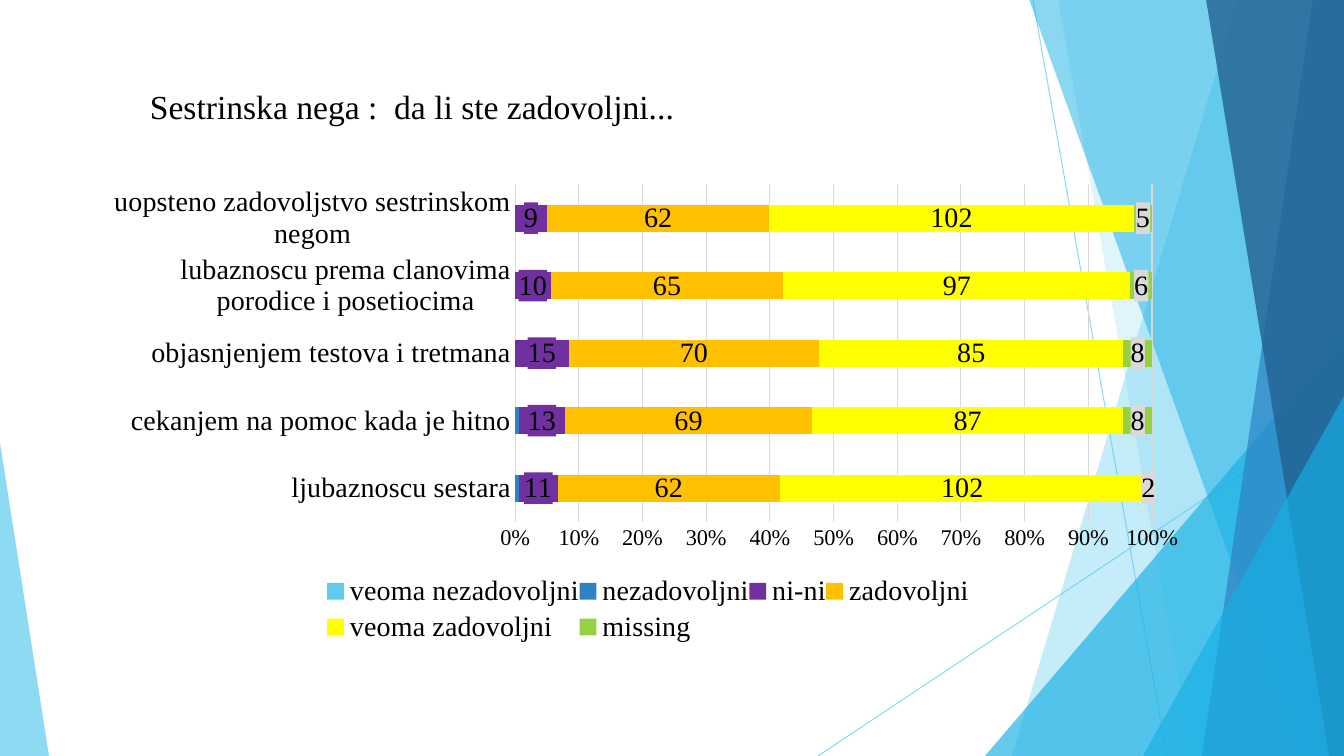
import pptx
import pptx.chart.data
import pptx.dml.color
import pptx.enum.chart
import pptx.enum.shapes
import pptx.enum.text
import pptx.oxml
import pptx.oxml.ns
import pptx.util

PX = 914400 / 100.8
WIDTH, HEIGHT = 1344, 756
FONT = "Times New Roman"
COLORS = {
    "sky": "5FCBEF", "cyan": "17B0E4", "blue": "2E83C3", "navy": "226292",
    "purple": "7030A0", "orange": "FFC000", "yellow": "FFFF00",
    "green": "96D141", "gray": "D9D9D9", "black": "000000",
}
CATEGORIES = [
    "ljubaznoscu sestara",
    "cekanjem na pomoc kada je hitno",
    "objasnjenjem testova i tretmana",
    "lubaznoscu prema clanovima porodice i posetiocima",
    "uopsteno zadovoljstvo sestrinskom negom",
]
# Name, values, bar colour, whether labelled, label background
SERIES = [
    ("veoma nezadovoljni", [None] * 5, "sky", False, None),
    ("nezadovoljni", [1, 1, None, None, None], "blue", False, None),
    ("ni-ni", [11, 13, 15, 10, 9], "purple", True, "purple"),
    ("zadovoljni", [62, 69, 70, 65, 62], "orange", True, None),
    ("veoma zadovoljni", [102, 87, 85, 97, 102], "yellow", True, None),
    ("missing", [2, 8, 8, 6, 5], "green", True, "gray"),
]


def px(length):
    return pptx.util.Emu(round(length * PX))


def rgb(name):
    return pptx.dml.color.RGBColor.from_string(COLORS[name])


def style_font(font, size):
    font.name = FONT
    font.size = pptx.util.Pt(size)
    font.color.rgb = rgb("black")


def set_opacity(color_parent, percent):
    color = color_parent.find(".//" + pptx.oxml.ns.qn("a:srgbClr"))
    alpha = color.makeelement(pptx.oxml.ns.qn("a:alpha"), {"val": str(percent * 1000)})
    color.append(alpha)


def paint(shape, color, opacity):
    shape.shadow.inherit = False
    shape.fill.solid()
    shape.fill.fore_color.rgb = rgb(color)
    shape.line.fill.background()
    set_opacity(shape._element.spPr, opacity)


def add_ray(page, start, end):
    ray = page.shapes.add_connector(
        pptx.enum.shapes.MSO_CONNECTOR.STRAIGHT, *map(px, start + end))
    ray.line.color.rgb = rgb("sky")
    ray.line.width = pptx.util.Pt(0.75)
    properties = ray._element.spPr
    set_opacity(properties, 70)
    properties.append(properties.makeelement(pptx.oxml.ns.qn("a:effectLst"), {}))


def add_band(page, top, bottom, color, opacity):
    """Fill from a slanted edge, given by its x at top and bottom, to the right side."""
    builder = page.shapes.build_freeform(top, -1, scale=PX)
    builder.add_line_segments([(WIDTH, -1), (WIDTH, HEIGHT), (bottom, HEIGHT)], close=True)
    paint(builder.convert_to_shape(), color, opacity)


def add_corner(page, left, top, width, apex, color, opacity):
    """Right triangle standing on the slide's bottom; apex is 0 (left) or 1 (right)."""
    corner = page.shapes.add_shape(
        pptx.enum.shapes.MSO_SHAPE.ISOSCELES_TRIANGLE,
        px(left), px(top), px(width), px(HEIGHT - top))
    corner.adjustments[0] = apex
    paint(corner, color, opacity)


def add_title(page, text):
    box = page.shapes.add_textbox(px(140), px(81), px(1058), px(67))
    box.text_frame.word_wrap = True
    box.text_frame.vertical_anchor = pptx.enum.text.MSO_ANCHOR.TOP
    span = box.text_frame.paragraphs[0].add_run()
    span.text = text
    style_font(span.font, 24)


def set_layout(parent, index, x, y, width, height, inner=False):
    """Place a chart part by fractions of the chart's size."""
    for old in parent.findall(pptx.oxml.ns.qn("c:layout")):
        parent.remove(old)
    target = '<c:layoutTarget val="inner"/>' if inner else ""
    parent.insert(index, pptx.oxml.parse_xml(
        f'<c:layout {pptx.oxml.ns.nsdecls("c")}><c:manualLayout>{target}'
        '<c:xMode val="edge"/><c:yMode val="edge"/>'
        f'<c:x val="{x}"/><c:y val="{y}"/><c:w val="{width}"/><c:h val="{height}"/>'
        '</c:manualLayout></c:layout>'))


def label_series(series, background):
    labels = series.data_labels
    labels.show_value = True
    style_font(labels.font, 20)
    if background:
        text_properties = labels._element.find(pptx.oxml.ns.qn("c:txPr"))
        text_properties.addprevious(pptx.oxml.parse_xml(
            f'<c:spPr {pptx.oxml.ns.nsdecls("c", "a")}><a:solidFill>'
            f'<a:srgbClr val="{COLORS[background]}"/></a:solidFill></c:spPr>'))


def style_axes(chart):
    for axis, size in ((chart.category_axis, 20), (chart.value_axis, 16)):
        axis.major_tick_mark = pptx.enum.chart.XL_TICK_MARK.NONE
        axis.minor_tick_mark = pptx.enum.chart.XL_TICK_MARK.NONE
        style_font(axis.tick_labels.font, size)
    chart.category_axis.has_major_gridlines = False
    chart.value_axis.has_major_gridlines = True
    chart.value_axis.format.line.fill.background()
    chart.value_axis.tick_labels.number_format = "0%"
    chart.value_axis.tick_labels.number_format_is_linked = False
    for line in (chart.category_axis.format.line,
                 chart.value_axis.major_gridlines.format.line):
        line.color.rgb = rgb("gray")
        line.width = pptx.util.Pt(0.75)


def add_satisfaction_chart(page):
    data = pptx.chart.data.CategoryChartData()
    data.categories = CATEGORIES
    for name, values, *_ in SERIES:
        data.add_series(name, values)
    chart = page.shapes.add_chart(
        pptx.enum.chart.XL_CHART_TYPE.BAR_STACKED_100,
        px(94), px(175), px(1108), px(472), data).chart
    chart.has_title = False
    style_font(chart.font, 20)
    style_axes(chart)

    plot = chart.plots[0]
    plot.gap_width = 150
    plot.overlap = 100
    plot.vary_by_categories = False
    for series, (_, _, color, labelled, background) in zip(plot.series, SERIES):
        series.format.fill.solid()
        series.format.fill.fore_color.rgb = rgb(color)
        if labelled:
            label_series(series, background)

    chart.has_legend = True
    chart.legend.position = pptx.enum.chart.XL_LEGEND_POSITION.BOTTOM
    chart.legend.include_in_layout = False
    style_font(chart.legend.font, 20)
    set_layout(chart._chartSpace.chart.plotArea, 0, 0.38, 0.02, 0.575, 0.715, inner=True)
    set_layout(chart.legend._element, 1, 0.21, 0.84, 0.58, 0.16)


def main():
    deck = pptx.Presentation()
    deck.slide_width, deck.slide_height = px(WIDTH), px(HEIGHT)
    page = deck.slides.add_slide(deck.slide_layouts[6])
    add_ray(page, (1033, 0), (1167, HEIGHT))
    add_ray(page, (WIDTH, 406), (818, HEIGHT))
    add_band(page, 1238, 1012, "sky", 36)
    add_band(page, 1058, 1192, "sky", 20)
    add_corner(page, 985, 336, 359, 1, "cyan", 66)
    add_band(page, 1029, 1301, "cyan", 50)
    add_band(page, 1313, 1202, "blue", 70)
    add_band(page, 1206, 1329, "navy", 80)
    add_corner(page, 1143, 396, 201, 1, "cyan", 66)
    add_corner(page, 0, 443, 49, 0, "sky", 70)
    add_title(page, "Sestrinska nega :  da li ste zadovoljni...")
    add_satisfaction_chart(page)
    deck.save("out.pptx")


if __name__ == "__main__":
    main()
